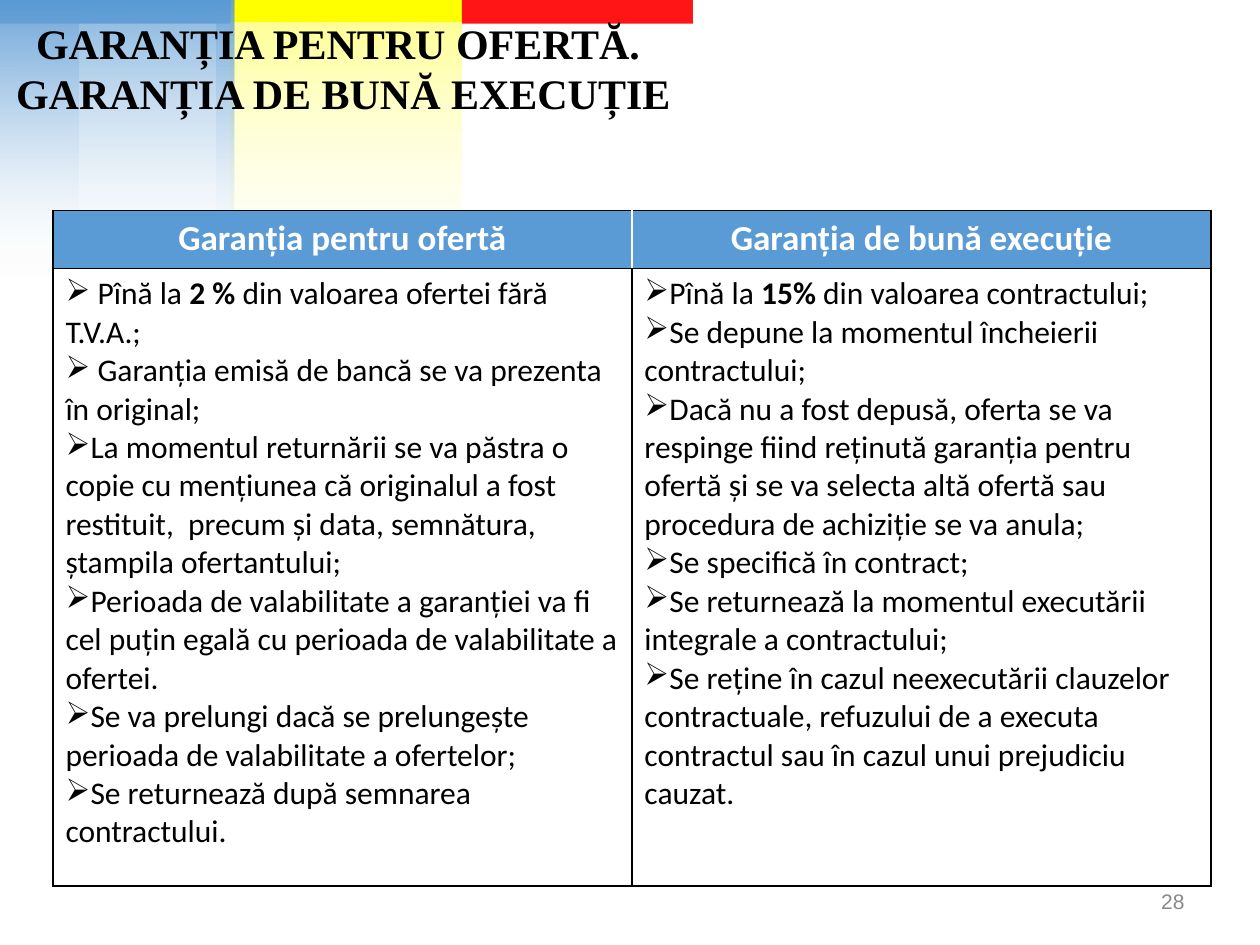
from typing import NamedTuple
from lxml.etree import SubElement
from pptx import Presentation
from pptx.dml.color import RGBColor
from pptx.enum.shapes import MSO_SHAPE
from pptx.enum.text import MSO_ANCHOR, PP_ALIGN
from pptx.oxml import parse_xml
from pptx.oxml.ns import nsdecls, qn
from pptx.util import Inches, Pt

WIDE, HIGH = 10, 7.5
HUES = {"blue": "5B9BD5", "yellow": "FFFF00", "red": "FF1515", "cream": "FFFF97",
        "white": "FFFFFF", "black": "000000", "gray": "898989"}
THIRD = 0.1833  # width of one flag stripe, as a share of the slide


class Band(NamedTuple):
    """A strip of the backdrop; left, top, width and height are slide shares."""
    left: float
    top: float
    width: float
    height: float
    hue: str
    alpha: int = 100
    fade: bool = True


class Column(NamedTuple):
    head: str
    items: list[str]


# Flag stripes, then the strips fading downwards
BANDS = [
    *(Band(i * THIRD, 0, THIRD, 0.025, hue, fade=False)
      for i, hue in enumerate(("blue", "yellow", "red"))),
    Band(THIRD, 0.024, THIRD, 0.301, "cream"),
    *(Band(left, 0, width, 0.295, "blue", 50)
      for left, width in ((0, 0.185), (0.172, 0.013), (0, 0.062), (0, 0.186))),
]

TITLE = ["GARANȚIA PENTRU OFERTĂ. ", "GARANȚIA DE BUNĂ EXECUȚIE"]

# Asterisks enclose bold words
COLUMNS = [
    Column("Garanția pentru ofertă", [
        " Pînă la *2 % *din valoarea ofertei fără T.V.A.;",
        " Garanția emisă de bancă se va prezenta în original;",
        "La momentul returnării se va păstra o copie cu mențiunea că originalul a fost "
        "restituit,  precum și data, semnătura, ștampila ofertantului;",
        "Perioada de valabilitate a garanției va fi cel puțin egală cu perioada de "
        "valabilitate a ofertei.",
        "Se va prelungi dacă se prelungește perioada de valabilitate a ofertelor;",
        "Se returnează după semnarea contractului.",
    ]),
    Column("Garanția de bună execuție", [
        "Pînă la *15% *din valoarea contractului;",
        "Se depune la momentul încheierii contractului;",
        "Dacă nu a fost depusă, oferta se va respinge fiind reținută garanția pentru "
        "ofertă și se va selecta altă ofertă sau procedura de achiziție se va anula;",
        "Se specifică în contract;",
        "Se returnează la momentul executării integrale a contractului;",
        "Se reține în cazul neexecutării clauzelor contractuale, refuzului de a executa "
        "contractul sau în cazul unui prejudiciu cauzat.",
    ]),
]


def color(hue: str) -> RGBColor:
    return RGBColor.from_string(HUES[hue])


def area(left: float, top: float, width: float, height: float) -> tuple:
    """Turn shares of the slide into lengths."""
    return (Inches(left * WIDE), Inches(top * HIGH),
            Inches(width * WIDE), Inches(height * HIGH))


def write(frame, lines: list[str], *, size: int, font: str = "Calibri",
          hue: str = "black", bold: bool = False, align=PP_ALIGN.LEFT,
          bullet: str = "", pitch: float = 0) -> None:
    frame.word_wrap = True
    for i, line in enumerate(lines):
        para = frame.add_paragraph() if i else frame.paragraphs[0]
        para.alignment = align
        if pitch:
            para.line_spacing = Pt(pitch)
        if bullet:
            props = para._p.get_or_add_pPr()
            props.set("marL", "0")
            props.set("indent", "0")
            SubElement(props, qn("a:buChar")).set("char", bullet)
        for j, part in enumerate(line.split("*")):
            run = para.add_run()
            run.text = part
            run.font.name, run.font.size = font, Pt(size)
            run.font.bold = bold or j % 2 == 1
            run.font.color.rgb = color(hue)


def draw_band(slide, band: Band) -> None:
    shape = slide.shapes.add_shape(MSO_SHAPE.RECTANGLE, *area(*band[:4]))
    shape.shadow.inherit = False
    shape.line.fill.background()
    if not band.fade:
        shape.fill.solid()
        shape.fill.fore_color.rgb = color(band.hue)
        return
    shape.fill.gradient()
    shape.fill.gradient_angle = 270
    for stop, hue in zip(shape.fill.gradient_stops, (band.hue, "white")):
        stop.color.rgb = color(hue)
    marks = shape._element.spPr.iter(qn("a:srgbClr"))
    for mark, alpha in zip(list(marks), (band.alpha, 0)):
        SubElement(mark, qn("a:alpha")).set("val", str(alpha * 1000))


def paint(cell, hue: str, white: str = "") -> None:
    """Fill a cell and edge it in black, but for one side in white."""
    cell.fill.solid()
    cell.fill.fore_color.rgb = color(hue)
    props = cell._tc.get_or_add_tcPr()
    for i, side in enumerate("LRTB"):
        edge = HUES["white" if side == white else "black"]
        props.insert(i, parse_xml(
            f'<a:ln{side} {nsdecls("a")} w="12700"><a:solidFill>'
            f'<a:srgbClr val="{edge}"/></a:solidFill></a:ln{side}>'))


def draw_table(slide, columns: list[Column]) -> None:
    table = slide.shapes.add_table(
        2, len(columns), *area(0.042, 0.2227, 0.919, 0.7147)).table
    table.rows[0].height, table.rows[1].height = Inches(0.46), Inches(4.9)
    for i, column in enumerate(columns):
        head, body = table.cell(0, i), table.cell(1, i)
        paint(head, "blue", white="RL"[i])
        paint(body, "white")
        write(head.text_frame, [column.head], size=20, hue="white", bold=True,
              align=PP_ALIGN.CENTER)
        write(body.text_frame, column.items, size=18, bullet="➢")


def main() -> None:
    deck = Presentation()
    deck.slide_width, deck.slide_height = Inches(WIDE), Inches(HIGH)
    slide = deck.slides.add_slide(deck.slide_layouts[5])

    # Backdrop
    for band in BANDS:
        draw_band(slide, band)

    # Page number
    page = slide.shapes.add_textbox(*area(0.717, 0.927, 0.233, 0.053)).text_frame
    page.vertical_anchor = MSO_ANCHOR.MIDDLE
    write(page, ["28"], size=12, font="Arial", hue="gray", align=PP_ALIGN.RIGHT)

    # Title, brought in front of the backdrop
    title = slide.shapes.title
    title.left, title.top, title.width, title.height = area(-0.2, 0.011, 0.945, 0.121)
    title.text_frame.vertical_anchor = MSO_ANCHOR.TOP
    write(title.text_frame, TITLE, size=24, font="Times New Roman", bold=True,
          align=PP_ALIGN.CENTER, pitch=29)
    slide.shapes._spTree.append(title._element)

    draw_table(slide, COLUMNS)
    deck.save("out.pptx")


if __name__ == "__main__":
    main()
